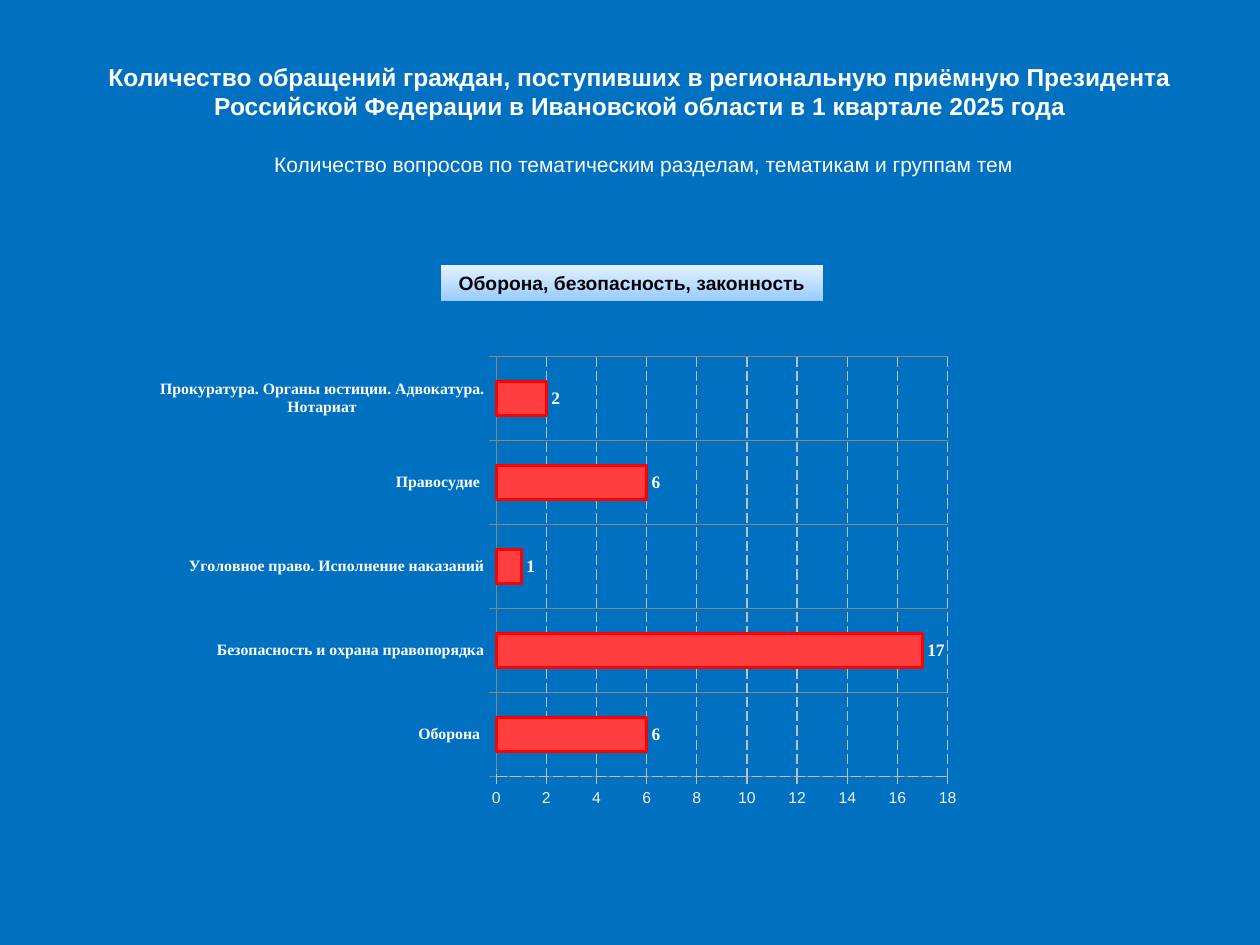
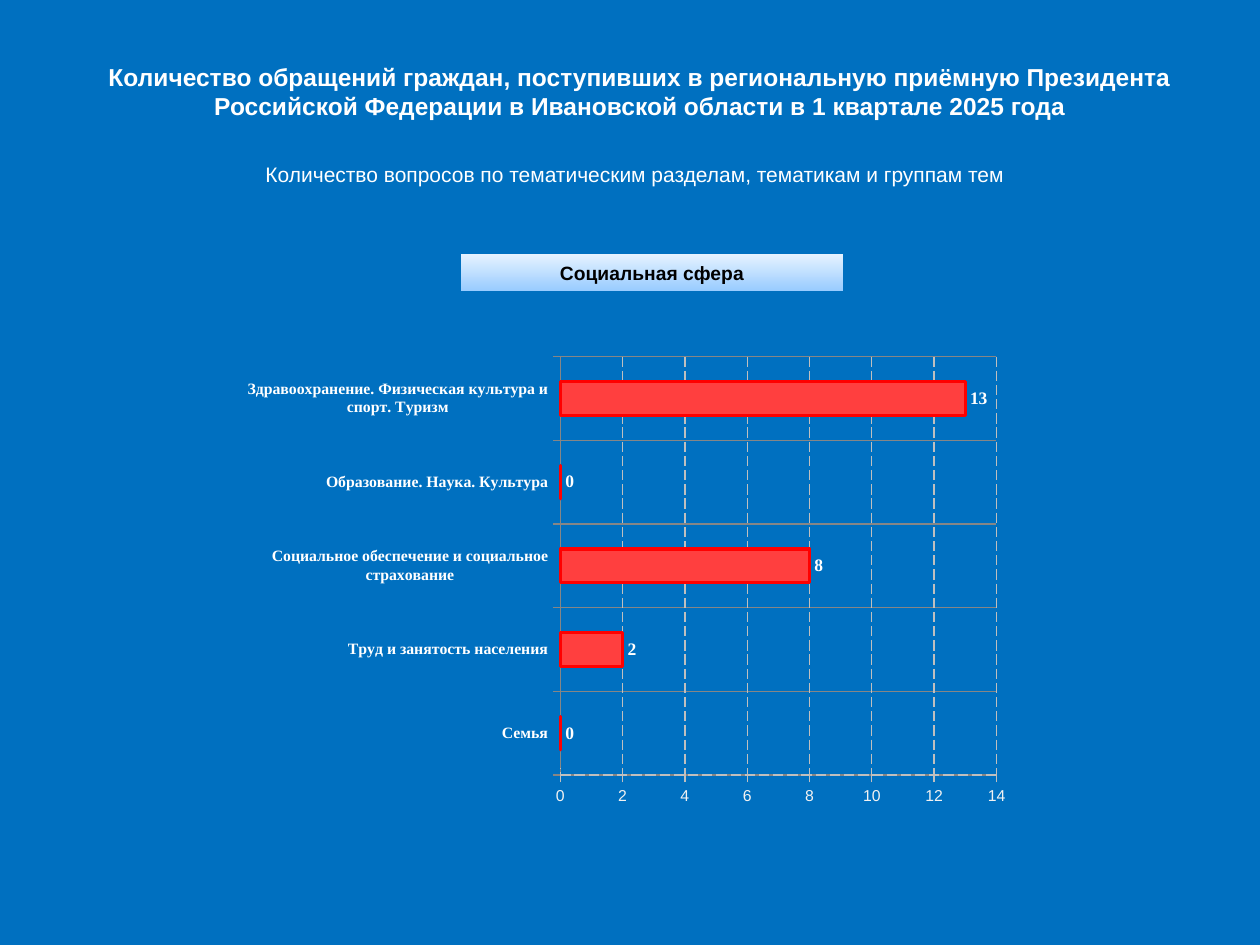
from dataclasses import dataclass
from typing import Any

import pptx
import pptx.chart.data
import pptx.dml.color
import pptx.enum.chart
import pptx.enum.dml
import pptx.enum.shapes
import pptx.enum.text
import pptx.oxml
import pptx.oxml.ns
import pptx.util

Pt = pptx.util.Pt
RGB = pptx.dml.color.RGBColor.from_string


@dataclass(frozen=True)
class Theme:
    background: str = "0070C0"
    white: str = "FFFFFF"
    black: str = "000000"
    bar: str = "FF3F3F"
    bar_edge: str = "FF0000"
    grid: str = "BFBFBF"
    divider: str = "868686"
    scale_text: str = "F2F2F2"
    tag_top: str = "E5F2FF"
    tag_bottom: str = "99CCFF"
    sans: str = "Arial"
    serif: str = "Times New Roman"
    title_size: float = 14
    subtitle_size: float = 12
    tag_size: float = 11
    value_size: float = 10
    axis_size: float = 9


@dataclass(frozen=True)
class Box:
    left: float
    top: float
    width: float
    height: float

    def lengths(self) -> tuple:
        return tuple(Pt(v) for v in (self.left, self.top, self.width, self.height))


@dataclass(frozen=True)
class Topic:
    name: str
    subtitle_box: Box
    tag_box: Box
    chart_box: Box
    plot: Box
    scale_max: int
    counts: dict[str, int]


T = Theme()
TITLE = ("Количество обращений граждан, поступивших в региональную приёмную Президента "
         "Российской Федерации в Ивановской области в 1 квартале 2025 года")
SUBTITLE = "Количество вопросов по тематическим разделам, тематикам и группам тем"
TITLE_BOX = Box(23, 31.7, 685.4, 45.4)

TOPICS = [
    Topic("Оборона, безопасность, законность",
          Box(25.2, 82.8, 685.4, 22.3), Box(252, 151.2, 218.2, 20.9),
          Box(87.8, 173.5, 504.7, 311.8), Box(0.388, 0.097, 0.511, 0.77), 18,
          {"Оборона ": 6,
           "Безопасность и охрана правопорядка": 17,
           "Уголовное право. Исполнение наказаний": 1,
           "Правосудие ": 6,
           "Прокуратура. Органы юстиции. Адвокатура. Нотариат": 2}),
    Topic("Социальная сфера",
          Box(20.2, 88.6, 685.4, 22.3), Box(263.5, 145.4, 218.2, 20.9),
          Box(133.2, 173.5, 465.1, 311.8), Box(0.402, 0.097, 0.536, 0.767), 14,
          {"Семья": 0,
           "Труд и занятость населения": 2,
           "Социальное обеспечение и социальное страхование": 8,
           "Образование. Наука. Культура": 0,
           "Здравоохранение. Физическая культура и спорт. Туризм": 13}),
]


def apply(target: Any, values: dict[str, Any]) -> None:
    for name, value in values.items():
        setattr(target, name, value)


def style_font(font: Any, size: float, color: str, bold: bool = False,
               name: str = T.sans) -> None:
    apply(font, {"size": Pt(size), "bold": bold, "name": name})
    font.color.rgb = RGB(color)


def style_line(line: Any, color: str, width: float = 0.75, dashed: bool = False) -> None:
    line.color.rgb = RGB(color)
    line.width = Pt(width)
    if dashed:
        line.dash_style = pptx.enum.dml.MSO_LINE.LONG_DASH


def place(sp: Any, box: Box) -> None:
    apply(sp, dict(zip(("left", "top", "width", "height"), box.lengths())))


def write(sp: Any, text: str, size: float, color: str, bold: bool = False,
          anchor: Any = pptx.enum.text.MSO_ANCHOR.TOP) -> None:
    tf = sp.text_frame
    apply(tf, {"word_wrap": True, "auto_size": pptx.enum.text.MSO_AUTO_SIZE.NONE,
               "vertical_anchor": anchor})
    p = tf.paragraphs[0]
    p.alignment = pptx.enum.text.PP_ALIGN.CENTER
    r = p.add_run()
    r.text = text
    style_font(r.font, size, color, bold)


def add_tag(s: Any, topic: Topic) -> None:
    sp = s.shapes.add_shape(pptx.enum.shapes.MSO_SHAPE.RECTANGLE, *topic.tag_box.lengths())
    sp.shadow.inherit = False
    sp.line.fill.background()
    sp.fill.gradient()
    sp.fill.gradient_angle = 270
    for stop, position, color in zip(sp.fill.gradient_stops, (0, 1), (T.tag_top, T.tag_bottom)):
        stop.position = position
        stop.color.rgb = RGB(color)
    write(sp, topic.name, T.tag_size, T.black, True, pptx.enum.text.MSO_ANCHOR.MIDDLE)


def set_plot_area(chart: Any, plot: Box) -> None:
    area = chart._chartSpace.chart.plotArea
    for old in area.findall(pptx.oxml.ns.qn("c:layout")):
        area.remove(old)
    settings = [("layoutTarget", "inner"), ("xMode", "edge"), ("yMode", "edge"),
                ("x", plot.left), ("y", plot.top), ("w", plot.width), ("h", plot.height)]
    body = "".join(f'<c:{tag} val="{value}"/>' for tag, value in settings)
    area.insert(0, pptx.oxml.parse_xml(
        f'<c:layout {pptx.oxml.ns.nsdecls("c")}><c:manualLayout>{body}</c:manualLayout></c:layout>'))


def add_bars(s: Any, topic: Topic) -> None:
    xl = pptx.enum.chart
    data = pptx.chart.data.CategoryChartData()
    data.categories = list(topic.counts)
    data.add_series("Series 1", list(topic.counts.values()))
    chart = s.shapes.add_chart(xl.XL_CHART_TYPE.BAR_CLUSTERED,
                               *topic.chart_box.lengths(), data).chart
    apply(chart, {"has_title": False, "has_legend": False})
    style_font(chart.font, T.value_size, T.black)
    set_plot_area(chart, topic.plot)

    cats, scale = chart.category_axis, chart.value_axis
    for axis in (cats, scale):
        apply(axis, {"has_major_gridlines": True,
                     "major_tick_mark": xl.XL_TICK_MARK.CROSS,
                     "minor_tick_mark": xl.XL_TICK_MARK.NONE})
    apply(scale, {"minimum_scale": 0, "maximum_scale": topic.scale_max, "major_unit": 2})
    style_font(cats.tick_labels.font, T.axis_size, T.white, True, T.serif)
    style_font(scale.tick_labels.font, T.axis_size, T.scale_text)
    for axis, color, dashed in ((cats, T.divider, False), (scale, T.grid, True)):
        for line in (axis.format.line, axis.major_gridlines.format.line):
            style_line(line, color, dashed=dashed)

    plot = chart.plots[0]
    apply(plot, {"gap_width": 150, "vary_by_categories": False, "has_data_labels": True})
    apply(plot.data_labels, {"show_value": True,
                             "position": xl.XL_LABEL_POSITION.OUTSIDE_END})
    style_font(plot.data_labels.font, T.value_size, T.white, True, T.serif)
    series = plot.series[0]
    series.invert_if_negative = False
    series.format.fill.solid()
    series.format.fill.fore_color.rgb = RGB(T.bar)
    style_line(series.format.line, T.bar_edge, 1.75)


def add_topic_slide(prs: Any, topic: Topic) -> None:
    s = prs.slides.add_slide(prs.slide_layouts[5])
    add_bars(s, topic)
    place(s.shapes.title, TITLE_BOX)
    write(s.shapes.title, TITLE, T.title_size, T.white, True)
    write(s.shapes.add_textbox(*topic.subtitle_box.lengths()), SUBTITLE,
          T.subtitle_size, T.white)
    add_tag(s, topic)


def main() -> None:
    prs = pptx.Presentation()
    apply(prs, {"slide_width": Pt(720), "slide_height": Pt(540)})
    fill = prs.slide_master.background.fill
    fill.solid()
    fill.fore_color.rgb = RGB(T.background)
    for topic in TOPICS:
        add_topic_slide(prs, topic)
    prs.save("out.pptx")


if __name__ == "__main__":
    main()
